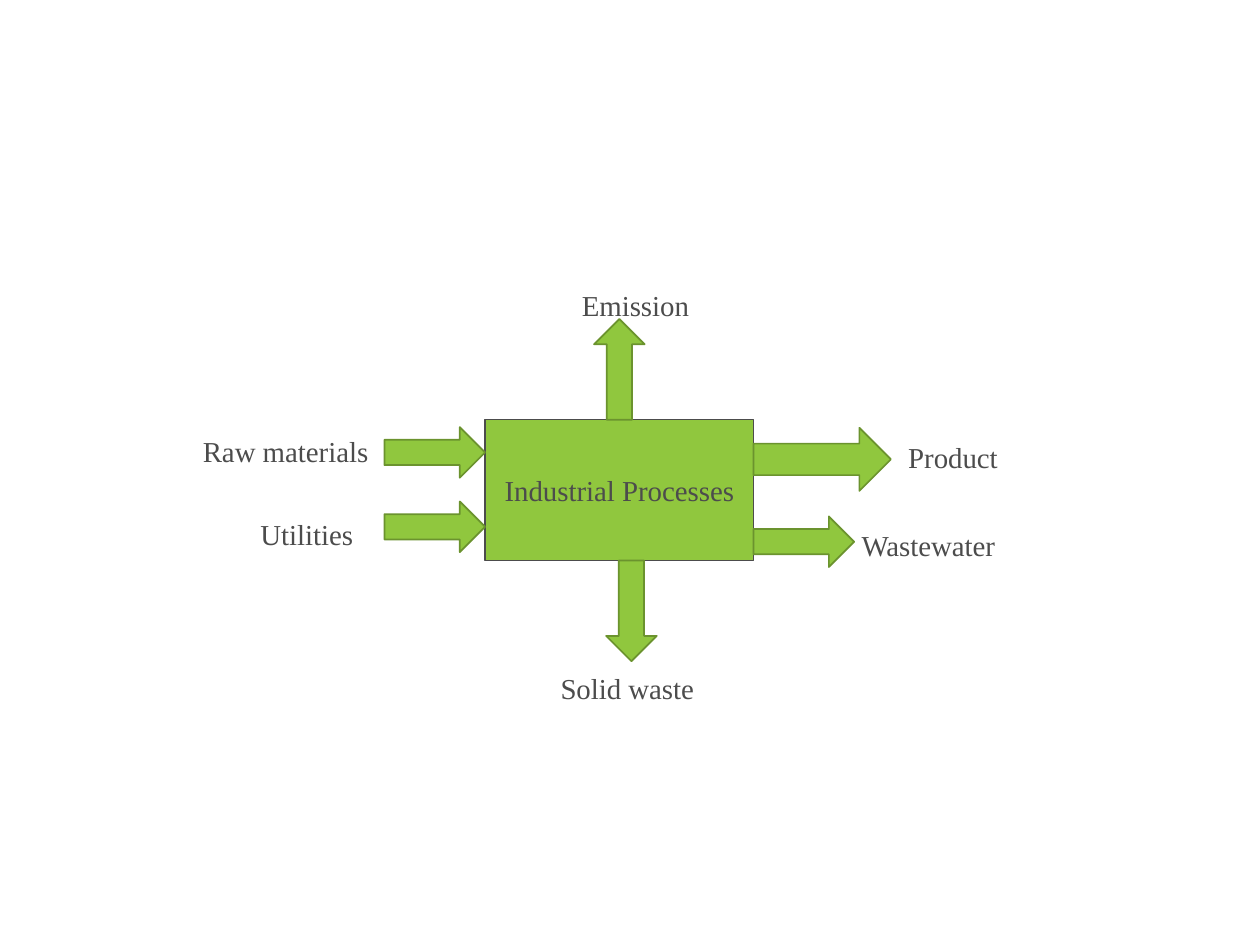
from math import cos, radians, sin

from pptx import Presentation
from pptx.dml.color import RGBColor
from pptx.enum.shapes import MSO_SHAPE
from pptx.enum.text import MSO_ANCHOR, MSO_AUTO_SIZE, PP_ALIGN
from pptx.util import Cm, Pt

RECTANGLE, DOWN_ARROW = MSO_SHAPE.RECTANGLE, MSO_SHAPE.DOWN_ARROW
MIDDLE, TOP = MSO_ANCHOR.MIDDLE, MSO_ANCHOR.TOP
CENTER, LEFT = PP_ALIGN.CENTER, PP_ALIGN.LEFT
FIT_SHAPE = MSO_AUTO_SIZE.SHAPE_TO_FIT_TEXT
GREEN = RGBColor(0x90, 0xC7, 0x3E)
DARK_GREEN = RGBColor(0x6B, 0x93, 0x2E)
GREY = RGBColor(0x4C, 0x4C, 0x4C)
FONT = "Times New Roman"
DOWN, UP, RIGHT = 0, 180, 270
ARROW_LENGTH, ARROW_WIDTH, LABEL_HEIGHT = 2.03, 1.02, 0.97


def write_text(frame, text, size=16.5, color=GREY, align=LEFT, anchor=TOP):
    """Write one unwrapped line of formatted text into a text frame."""
    frame.word_wrap = False
    frame.vertical_anchor = anchor
    paragraph = frame.paragraphs[0]
    paragraph.alignment = align
    run = paragraph.add_run()
    run.text = text
    run.font.name = FONT
    run.font.size = Pt(size)
    run.font.color.rgb = color


def add_filled(slide, kind, left, top, width, height, line_color, line_width):
    """Add a green preset shape with an outline and no shadow."""
    shape = slide.shapes.add_shape(kind, Cm(left), Cm(top), Cm(width), Cm(height))
    shape.shadow.inherit = False
    shape.fill.solid()
    shape.fill.fore_color.rgb = GREEN
    shape.line.color.rgb = line_color
    shape.line.width = Pt(line_width)
    return shape


def add_label(slide, text, left, top, width):
    """Add the name of one flow."""
    label = slide.shapes.add_textbox(Cm(left), Cm(top), Cm(width), Cm(LABEL_HEIGHT))
    write_text(label.text_frame, text)
    label.text_frame.auto_size = FIT_SHAPE


def add_flow_arrow(slide, tail_x, tail_y, direction, length=ARROW_LENGTH, width=ARROW_WIDTH):
    """Add a block arrow that starts at its tail and points in a direction."""
    center_x = tail_x - sin(radians(direction)) * length / 2
    center_y = tail_y + cos(radians(direction)) * length / 2
    arrow = add_filled(slide, DOWN_ARROW, center_x - width / 2, center_y - length / 2,
                       width, length, DARK_GREEN, 1)
    arrow.rotation = direction


def add_process_diagram(slide, left, top, width, height):
    """Place the process box with its labelled inputs and outputs around it."""
    process = add_filled(slide, RECTANGLE, left, top, width, height, GREY, 0.75)
    write_text(process.text_frame, "Industrial Processes", align=CENTER, anchor=MIDDLE)

    labels = [
        ("Raw materials", -5.94, 0.15, 3.91),
        ("Utilities", -4.78, 1.83, 2.41),
        ("Product", 8.28, 0.28, 2.34),
        ("Emission", 1.7, -2.79, 2.69),
        ("Solid waste", 1.27, 4.93, 3.25),
        ("Wastewater", 7.34, 2.06, 3.25),
    ]
    for text, x, y, label_width in labels:
        add_label(slide, text, left + x, top + y, label_width)

    add_flow_arrow(slide, left + 2.95, top + height, DOWN)
    add_flow_arrow(slide, left + width / 2, top, UP)
    for input_y in (0.66, 2.16):
        add_flow_arrow(slide, left - ARROW_LENGTH, top + input_y, RIGHT)
    add_flow_arrow(slide, left + width, top + 0.8, RIGHT, length=2.77, width=1.27)
    add_flow_arrow(slide, left + width, top + 2.46, RIGHT)


def main():
    """Build the slide and save it."""
    presentation = Presentation()
    presentation.slide_width, presentation.slide_height = Cm(25.4), Cm(19.05)
    slide = presentation.slides.add_slide(presentation.slide_layouts[6])
    add_process_diagram(slide, 9.78, 8.46, 5.41, 2.84)
    presentation.save("out.pptx")


if __name__ == "__main__":
    main()
